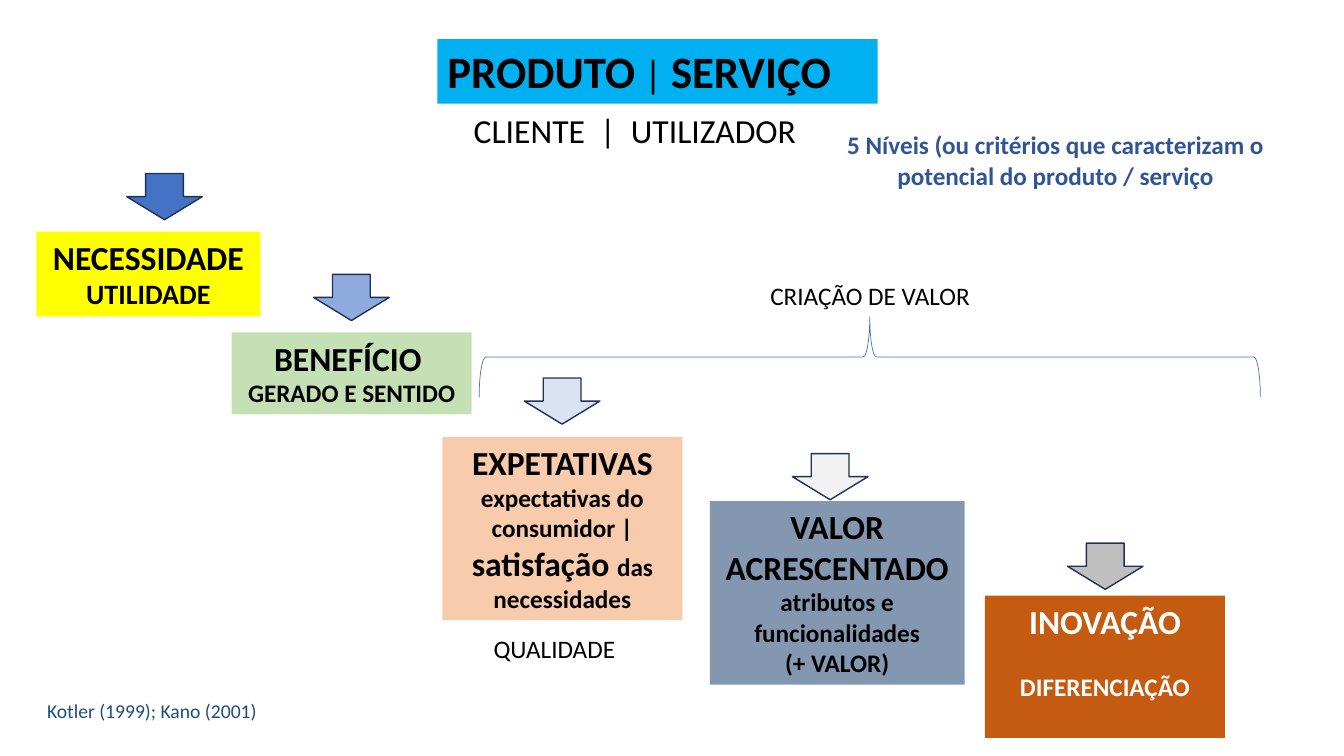
"""Draws the five levels of product and service value as a stepped diagram."""
import pptx
import pptx.dml.color
import pptx.enum.shapes
import pptx.enum.text
import pptx.util

Pt = pptx.util.Pt
Kind = pptx.enum.shapes.MSO_SHAPE
Align = pptx.enum.text.PP_ALIGN


def color(code):
    return pptx.dml.color.RGBColor.from_string(code)


class Board:
    font = "Calibri"
    edge = "1E3256"

    def __init__(self, deck):
        self.slide = deck.slides.add_slide(deck.slide_layouts[6])

    def shape(self, kind, place, fill=None, line=None, width=1):
        item = self.slide.shapes.add_shape(kind, *map(Pt, place))
        item.shadow.inherit = False
        if fill:
            item.fill.solid()
            item.fill.fore_color.rgb = color(fill)
        else:
            item.fill.background()
        if line:
            item.line.color.rgb = color(line)
            item.line.width = Pt(width)
        else:
            item.line.fill.background()
        return item

    def arrow(self, left, top, fill):
        self.shape(Kind.DOWN_ARROW, (left, top, 54, 33), fill, self.edge)

    def brace(self, left, top, width, height, line):
        item = self.shape(Kind.LEFT_BRACE, (left, top, width, height), None, line, 0.5)
        item.rotation = 90

    def box(self, place, paras, fill, ink="000000", bold=True, align=Align.CENTER, gap=0):
        self.letter(self.shape(Kind.RECTANGLE, place, fill), paras, ink, bold, align, gap)

    def label(self, place, text, size, ink="000000", bold=False, align=Align.CENTER):
        item = self.slide.shapes.add_textbox(*map(Pt, place))
        self.letter(item, [[(text, size)]], ink, bold, align)

    def letter(self, item, paras, ink, bold, align, gap=0):
        frame = item.text_frame
        frame.word_wrap = True
        frame.vertical_anchor = pptx.enum.text.MSO_ANCHOR.TOP
        frame.text = "\n".join(parts[0][0] for parts in paras)
        for rank, (para, parts) in enumerate(zip(frame.paragraphs, paras)):
            para.alignment = align
            if rank and gap:
                para.space_before = Pt(gap)
            for text, size in parts[1:]:
                para.add_run().text = text
            for run, (text, size) in zip(para.runs, parts):
                run.font.name = self.font
                run.font.size = Pt(size)
                run.font.bold = bold and text.strip() != "|"
                run.font.color.rgb = color(ink)


def main():
    deck = pptx.Presentation()
    deck.slide_width, deck.slide_height = Pt(960), Pt(540)
    board = Board(deck)

    board.box((312.5, 28, 314.5, 46), [[("PRODUTO", 32), (" | ", 28), ("SERVIÇO", 32)]],
              "00B0F0", align=Align.LEFT)
    board.label((322.5, 75, 262, 36), "CLIENTE  |  UTILIZADOR", 24)
    board.label((566.5, 89, 375, 51),
                "5 Níveis (ou critérios que caracterizam o potencial do produto / serviço",
                18, "2F5597", True)

    for left, top, fill in [
        (90.5, 124, "4472C4"),
        (224, 196, "8FAADC"),
        (374.5, 270, "DAE3F3"),
        (566, 324, "F2F2F2"),
        (762.5, 388, "BFBFBF"),
    ]:
        board.arrow(left, top, fill)

    board.box((26, 165.5, 160, 60.5), [[("NECESSIDADE", 24)], [("UTILIDADE", 20)]], "FFFF00")
    board.box((165.5, 237.5, 171.5, 58.5),
              [[("BENEFÍCIO ", 24)], [("GERADO E SENTIDO", 18)]], "C5E0B4")
    board.box((316, 312, 171.5, 131),
              [[("EXPETATIVAS", 24)],
               [("expectativas do consumidor | ", 18), ("satisfação ", 24),
                ("das necessidades", 18)]], "F8CBAD")
    board.box((507, 358, 182, 131),
              [[("VALOR ACRESCENTADO", 24)], [("atributos e funcionalidades", 18)],
               [("(+ VALOR)", 18)]], "8497B0")
    board.box((703.5, 425.5, 171.5, 101.5),
              [[("INOVAÇÃO", 24)], [("DIFERENCIAÇÃO", 18)]], "C55A11", "FFFFFF", gap=22)

    board.brace(592.5, -24, 57.5, 558, "4472C4")
    board.label((470, 196.5, 303, 29), "CRIAÇÃO DE VALOR", 18)
    board.label((314.5, 448.5, 167, 29), "QUALIDADE ", 18)
    board.label((26.5, 495.5, 315, 24.5), "Kotler (1999); Kano (2001)", 14, "1F4E79",
                align=Align.LEFT)
    deck.save("out.pptx")


if __name__ == "__main__":
    main()
